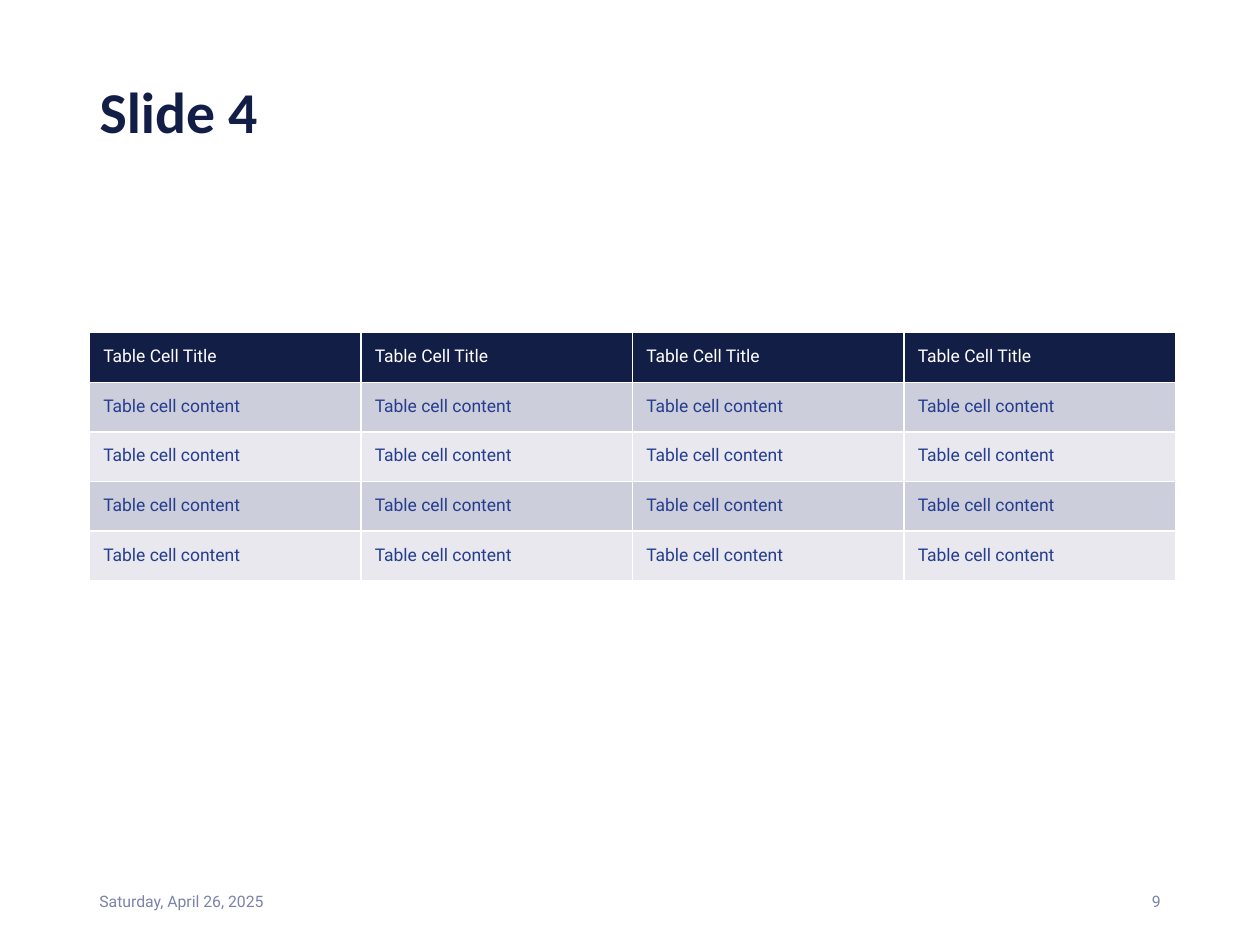
from dataclasses import dataclass

from lxml.etree import SubElement
from pptx import Presentation
from pptx.dml.color import RGBColor
from pptx.enum.text import MSO_ANCHOR, MSO_AUTO_SIZE, PP_ALIGN
from pptx.oxml.ns import qn
from pptx.util import Inches, Pt

NAVY, BLUE, MUTED, WHITE = "131E47", "253D8E", "7C82AA", "FFFFFF"
BANDS = ("CDCEDB", "E8E8EE")
COLS, ROWS = 4, 5
COL_W, ROW_H = 2.155, 0.394
CELL_MARGIN = 0.11


@dataclass
class Style:
    font: str
    size: float
    color: str
    bold: bool = False
    align: PP_ALIGN = PP_ALIGN.LEFT


@dataclass
class Box:
    left: float
    top: float
    width: float
    height: float

    def emu(self):
        return [Inches(v) for v in (self.left, self.top, self.width, self.height)]


def rgb(color: str) -> RGBColor:
    return RGBColor.from_string(color)


def write(tf, text: str, style: Style) -> None:
    tf.text = text
    p = tf.paragraphs[0]
    p.alignment = style.align
    font = p.runs[0].font
    font.name, font.size, font.bold = style.font, Pt(style.size), style.bold
    font.color.rgb = rgb(style.color)


def add_title(slide, text: str, box: Box, style: Style) -> None:
    sp = slide.shapes.title
    sp.left, sp.top, sp.width, sp.height = box.emu()
    tf = sp.text_frame
    write(tf, text, style)
    tf.auto_size = MSO_AUTO_SIZE.NONE
    tf.vertical_anchor = MSO_ANCHOR.MIDDLE
    tf.paragraphs[0].line_spacing = 0.9


def add_footer(slide, text: str, box: Box, style: Style) -> None:
    tf = slide.shapes.add_textbox(*box.emu()).text_frame
    tf.word_wrap = True
    tf.vertical_anchor = MSO_ANCHOR.MIDDLE
    write(tf, text, style)


def add_borders(cell, color: str, width: float) -> None:
    tc_pr = cell._tc.get_or_add_tcPr()
    for side in ("lnL", "lnR", "lnT", "lnB"):
        ln = SubElement(tc_pr, qn(f"a:{side}"), w=str(Pt(width)))
        fill = SubElement(ln, qn("a:solidFill"))
        SubElement(fill, qn("a:srgbClr"), val=color)


def fill_cell(cell, text: str, fill: str, style: Style) -> None:
    cell.margin_left = cell.margin_right = Inches(CELL_MARGIN)
    cell.margin_top = cell.margin_bottom = Inches(CELL_MARGIN)
    write(cell.text_frame, text, style)
    add_borders(cell, WHITE, 1)
    cell.fill.solid()
    cell.fill.fore_color.rgb = rgb(fill)


def add_grid(slide, left: float, top: float) -> None:
    box = Box(left, top, COLS * COL_W, ROWS * ROW_H)
    table = slide.shapes.add_table(ROWS, COLS, *box.emu()).table
    head, body = Style("Roboto", 10, WHITE), Style("Roboto", 10, BLUE)
    for i, row in enumerate(table.rows):
        for cell in row.cells:
            if i == 0:
                fill_cell(cell, "Table Cell Title", NAVY, head)
            else:
                fill_cell(cell, "Table cell content", BANDS[(i - 1) % 2], body)


def main() -> None:
    prs = Presentation()
    prs.slide_width, prs.slide_height = Inches(10), Inches(7.5)
    slide = prs.slides.add_slide(prs.slide_layouts[5])
    add_title(slide, "Slide 4", Box(0.69, 0.4, 8.07, 1.03),
              Style("Calibri", 33, NAVY, bold=True))
    add_footer(slide, "9", Box(8.28, 6.95, 1.03, 0.4),
               Style("Roboto", 9, MUTED, align=PP_ALIGN.RIGHT))
    add_footer(slide, "Saturday, April 26, 2025", Box(0.69, 6.95, 2.25, 0.4),
               Style("Roboto", 9, MUTED))
    add_grid(slide, 0.71, 2.64)
    prs.save("out.pptx")


if __name__ == "__main__":
    main()
